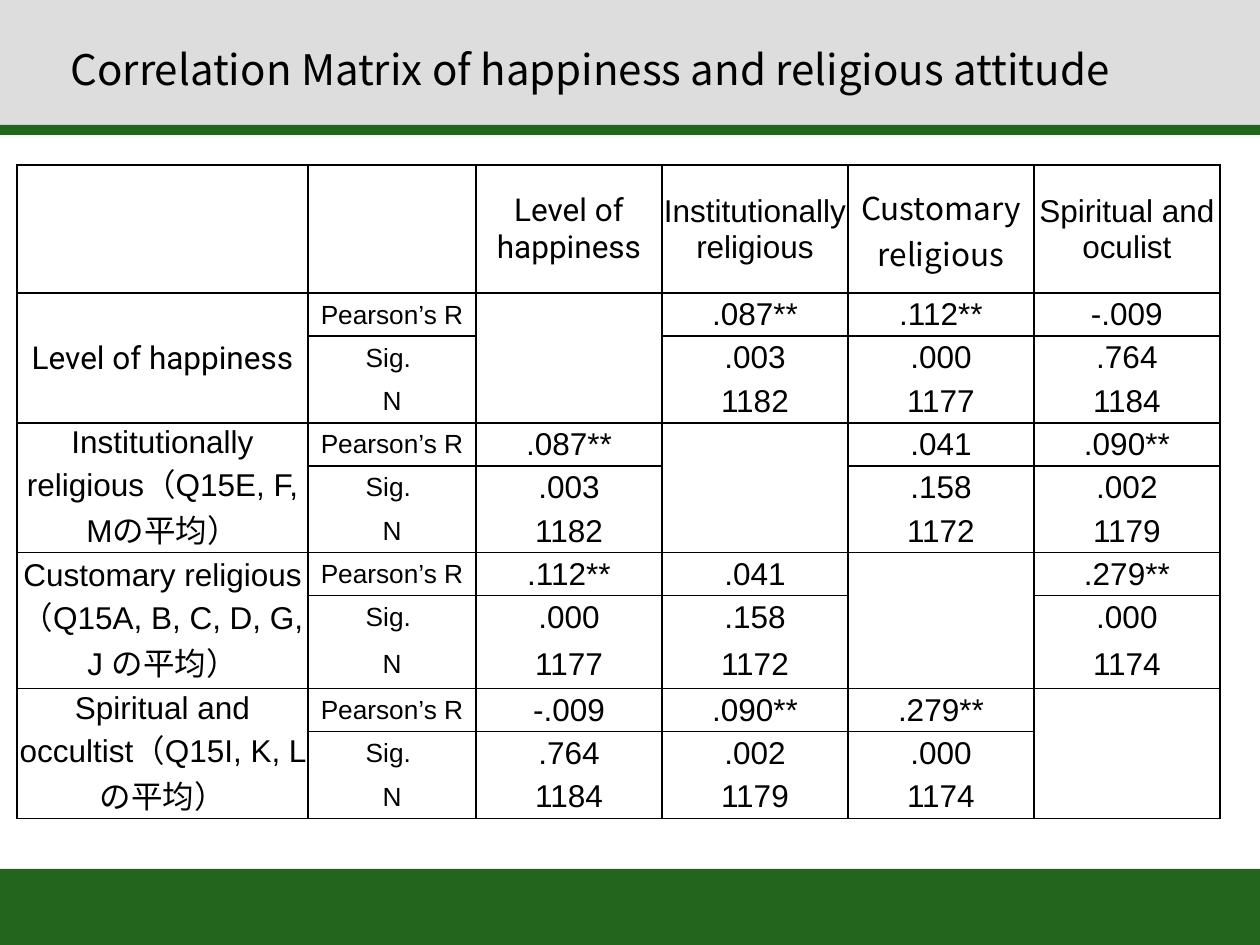
from dataclasses import dataclass

from lxml import etree
from pptx import Presentation
from pptx import util as u
from pptx.dml.color import RGBColor
from pptx.enum import shapes, text
from pptx.oxml.ns import qn


@dataclass(frozen=True)
class Theme:
    """Colours, fonts and type sizes of the slide."""
    ink: str = "000000"
    green: str = "23651C"
    grey: str = "DDDDDD"
    sans: str = "Arial"
    cjk: str = "Noto Sans CJK JP"
    label: str = "Roboto"
    title_pt: int = 24
    body_pt: int = 18
    small_pt: int = 15


T = Theme()
PX = u.Inches(1) // 126

HEADERS = [("Level of happiness", T.label), ("Institutionally religious", T.sans),
           ("Customary religious", T.cjk), ("Spiritual and oculist", T.sans)]
LABELS = [("Level of happiness", T.label),
          ("Institutionally religious（Q15E, F, Mの平均）", T.sans),
          ("Customary religious（Q15A, B, C, D, G, J の平均）", T.sans),
          ("Spiritual and occultist（Q15I, K, L の平均）", T.sans)]
STATS = ["Pearson’s R", "Sig. ", "N"]
PAIRS = {(0, 1): (".087**", ".003", "1182"), (0, 2): (".112**", ".000", "1177"),
         (0, 3): ("-.009", ".764", "1184"), (1, 2): (".041", ".158", "1172"),
         (1, 3): (".090**", ".002", "1179"), (2, 3): (".279**", ".000", "1174")}
COL_WIDTHS = [291, 168] + [186] * 4
ROW_HEIGHTS = [128] + [43, 43, 44] * 2 + [43, 43, 50] + [43, 43, 44]


def set_font(p, size, face):
    """Format a whole paragraph, with one face for its East Asian text."""
    p.font.size = u.Pt(size)
    p.font.name = face
    p.font.color.rgb = RGBColor.from_string(T.ink)
    for r in p.runs:
        ea = etree.SubElement(r._r.get_or_add_rPr(), qn("a:ea"))
        ea.set("typeface", T.cjk)


def add_bar(slide, box, color):
    """Add a plain filled rectangle."""
    sp = slide.shapes.add_shape(shapes.MSO_SHAPE.RECTANGLE, *(v * PX for v in box))
    sp.shadow.inherit = False
    sp.fill.solid()
    sp.fill.fore_color.rgb = RGBColor.from_string(color)
    sp.line.fill.background()


def add_frame(slide, box):
    """Add the header band, its rule and the footer band."""
    x, y, w, h = box
    add_bar(slide, (x, y + h - 76, w, 76), T.green)
    add_bar(slide, (x, y, w, 125), T.grey)
    add_bar(slide, (x, y + 125, w, 10), T.green)


def add_title(slide, box, words):
    """Place the title placeholder in front of the header band."""
    sp = slide.shapes.title
    sp.left, sp.top, sp.width, sp.height = (v * PX for v in box)
    slide.shapes._spTree.append(sp._element)
    tf = sp.text_frame
    tf.text = words
    tf.word_wrap = True
    tf.auto_size = text.MSO_AUTO_SIZE.NONE
    tf.vertical_anchor = text.MSO_ANCHOR.MIDDLE
    p = tf.paragraphs[0]
    p.alignment = text.PP_ALIGN.LEFT
    set_font(p, T.title_pt, T.cjk)


def set_borders(cell, sides):
    """Draw the named sides of a cell and clear the others."""
    tc_pr = cell._tc.get_or_add_tcPr()
    for side in "LRTB":
        ln = etree.SubElement(tc_pr, qn(f"a:ln{side}"), w=str(u.Pt(1)))
        if side in sides:
            fill = etree.SubElement(ln, qn("a:solidFill"))
            etree.SubElement(fill, qn("a:srgbClr"), val=T.ink)
        else:
            etree.SubElement(ln, qn("a:noFill"))


def format_cell(cell, sides):
    """Give a cell its borders, clear fill, margins and anchor."""
    set_borders(cell, sides)
    cell.fill.background()
    cell.margin_left = cell.margin_right = cell.margin_top = PX
    cell.margin_bottom = 0
    cell.vertical_anchor = text.MSO_ANCHOR.MIDDLE


def write(cell, words, size=T.body_pt, face=T.sans):
    """Put centred text in a cell."""
    cell.text = words
    p = cell.text_frame.paragraphs[0]
    p.alignment = text.PP_ALIGN.CENTER
    set_font(p, size, face)


def fill_group(table, i):
    """Fill the three rows that correlate variable i with the others."""
    top = 1 + 3 * i
    for col in (0, 2 + i):
        table.cell(top, col).merge(table.cell(top + 2, col))
    write(table.cell(top, 0), LABELS[i][0], face=LABELS[i][1])
    for k, stat in enumerate(STATS):
        write(table.cell(top + k, 1), stat, T.small_pt)
        for j in range(len(HEADERS)):
            if j != i:
                pair = PAIRS[min(i, j), max(i, j)]
                write(table.cell(top + k, 2 + j), pair[k])


def add_matrix(slide, left, top):
    """Add the correlation table."""
    frame = slide.shapes.add_table(
        len(ROW_HEIGHTS), len(COL_WIDTHS), left * PX, top * PX,
        sum(COL_WIDTHS) * PX, sum(ROW_HEIGHTS) * PX)
    table = frame.table
    table.first_row = table.horz_banding = False
    for col, width in zip(table.columns, COL_WIDTHS):
        col.width = width * PX
    for row, height in zip(table.rows, ROW_HEIGHTS):
        row.height = height * PX
    for j, (words, face) in enumerate(HEADERS):
        write(table.cell(0, 2 + j), words, face=face)
    for i in range(len(LABELS)):
        fill_group(table, i)
    for r, row in enumerate(table.rows):
        for cell in row.cells:
            sides = "LRTB" if r % 3 == 1 or r == 0 else "LRT" if r % 3 == 2 else "LRB"
            format_cell(cell, sides.replace("T", "") if cell.is_spanned else sides)


def main():
    """Build the slide and save it."""
    prs = Presentation()
    prs.slide_width, prs.slide_height = 1260 * PX, 945 * PX
    slide = prs.slides.add_slide(prs.slide_layouts[5])
    add_frame(slide, (0, 0, 1260, 945))
    add_matrix(slide, 17, 165)
    add_title(slide, (58, 37, 1121, 63),
              "Correlation Matrix of happiness and religious attitude")
    prs.save("out.pptx")


if __name__ == "__main__":
    main()
